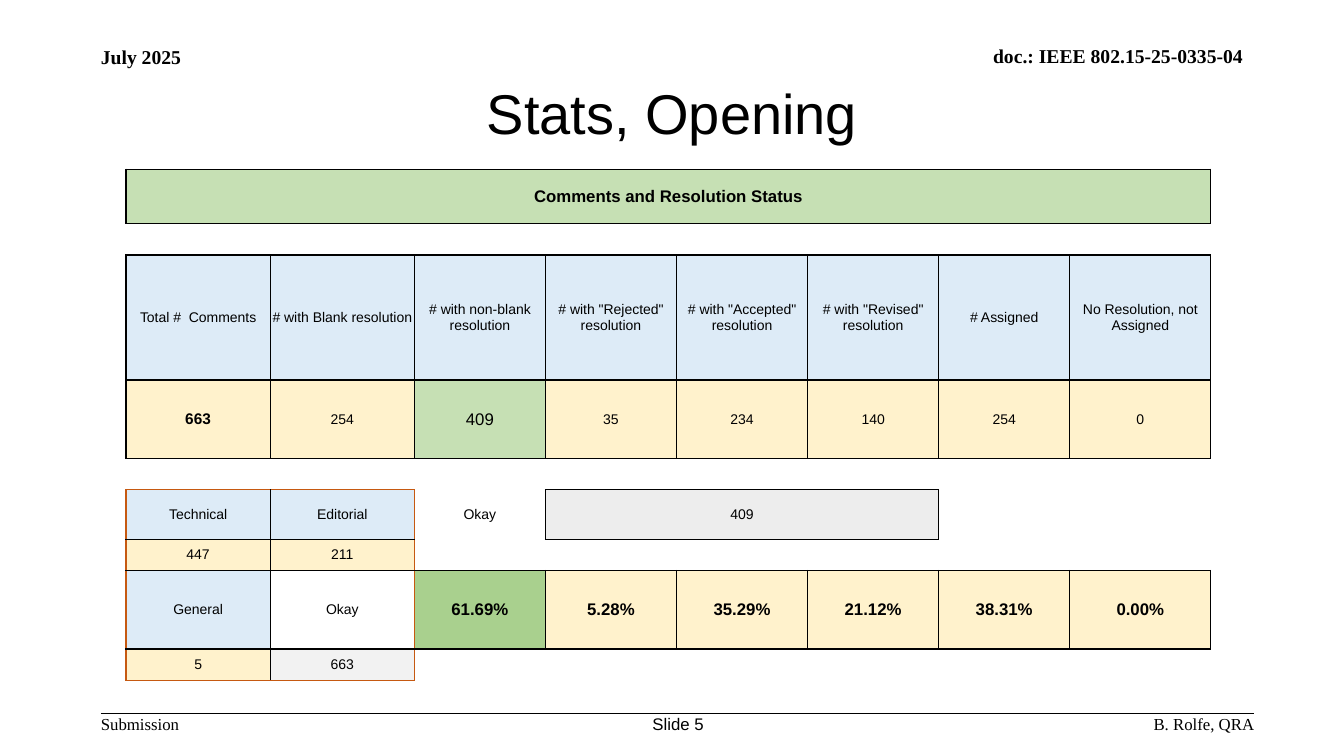
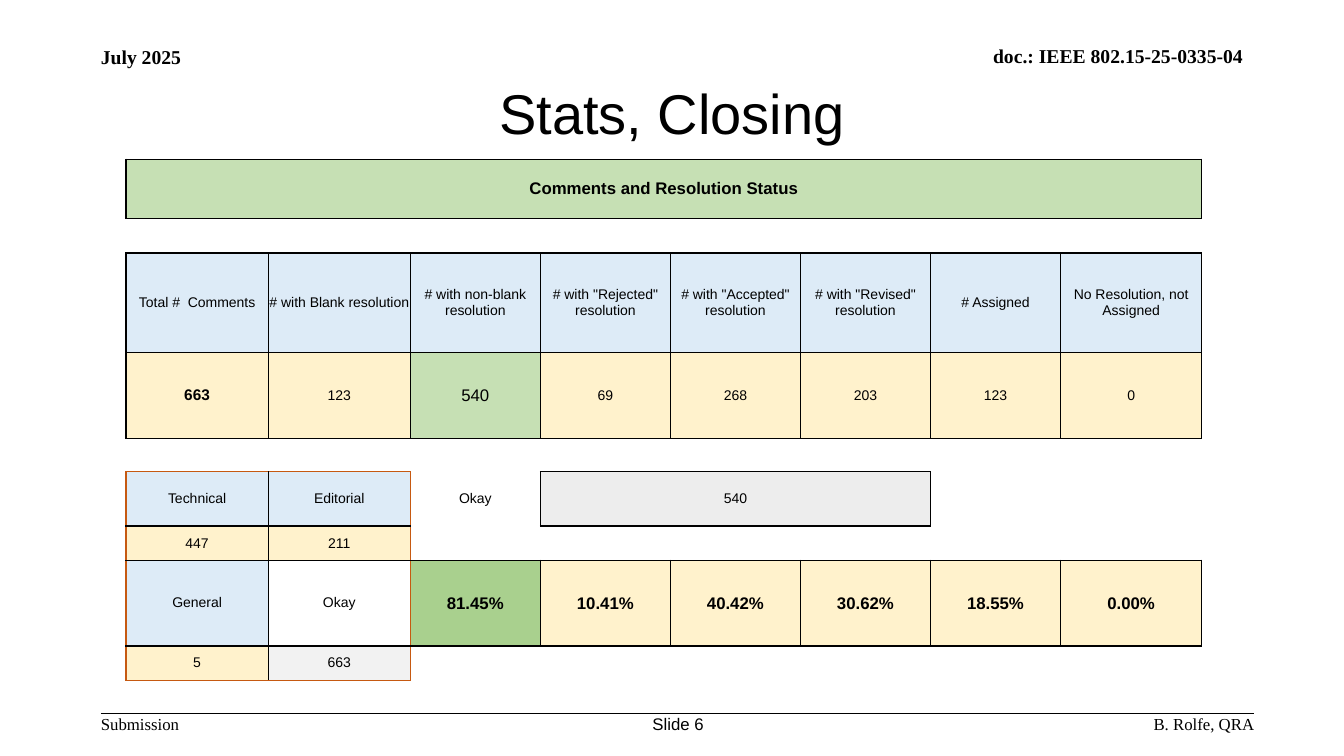
from lxml import etree
from pptx import Presentation
from pptx import util as u
from pptx.dml.color import RGBColor
from pptx.enum import shapes, text
from pptx.oxml.ns import qn

W, H = 13.33, 7.5
LEFT, RIGHT, FOOT = 1, 12.44, 7.08
TABLE_LEFT, TABLE_BOTTOM = 1.25, 6.75
BLACK, ORANGE = "000000", "C65911"
GREEN, DEEP_GREEN = "C6E0B4", "A9D08E"
BLUE, CREAM, GREY, PALE = "DDEBF7", "FFF2CC", "EDEDED", "F2F2F2"
SERIF, SANS = "Times New Roman", "Arial"
ALIGN = text.PP_ALIGN
ANCHOR = text.MSO_ANCHOR
HEADINGS = ["Total #  Comments", "# with Blank resolution", "# with non-blank resolution",
            '# with "Rejected" resolution', '# with "Accepted" resolution',
            '# with "Revised" resolution', "# Assigned", "No Resolution, not Assigned"]
KINDS = {"Technical": 447, "Editorial": 211, "General": 5}
BLOCK = {(r, c) for r in range(5, 9) for c in range(2)}
FRAME = [
    ("July 2025", (LEFT, 0.45, 2.22, 0.24), ALIGN.LEFT, ANCHOR.TOP, SERIF, 14, True),
    ("doc.: IEEE 802.15-25-0335-04", (6.22, 0.43, 6.11, 0.24), ALIGN.RIGHT, ANCHOR.BOTTOM,
     SERIF, 14, True),
    ("Submission", (LEFT, FOOT, 1.04, 0.2), ALIGN.LEFT, ANCHOR.TOP, SERIF, 12, False),
    ("B. Rolfe, QRA", (RIGHT - 3.22, FOOT, 3.22, 0.2), ALIGN.RIGHT, ANCHOR.TOP,
     SERIF, 12, False),
]
SLIDES = [
    dict(title="Stats, Opening", number=5, resolved=[35, 234, 140], unassigned=0,
         cols=[1.43] * 2 + [1.3] * 5 + [1.4],
         rows=[0.54, 0.31, 1.24, 0.78, 0.31, 0.49, 0.31, 0.78, 0.31]),
    dict(title="Stats, Closing", number=6, resolved=[69, 268, 203], unassigned=0,
         cols=[1.41] * 2 + [1.29] * 5 + [1.4],
         rows=[0.59, 0.34, 0.99, 0.85, 0.33, 0.54, 0.34, 0.85, 0.34]),
]


def rgb(value):
    """Turn a hex string into a colour."""
    return RGBColor.from_string(value)


def apply(obj, **values):
    """Set several attributes of an object."""
    for name, value in values.items():
        setattr(obj, name, value)


def write(tf, words, align, font, size, bold=False):
    """Put one formatted paragraph into a text frame."""
    p = tf.paragraphs[0]
    p.alignment = align
    r = p.add_run()
    r.text = words
    apply(r.font, name=font, size=u.Pt(size), bold=bold)
    r.font.color.rgb = rgb(BLACK)


def label(s, words, box, align, anchor, font, size, bold, wrap=True):
    """Add a text box without insets."""
    tf = s.shapes.add_textbox(*map(u.Inches, box)).text_frame
    apply(tf, margin_left=0, margin_right=0, margin_top=0, margin_bottom=0,
          word_wrap=wrap, vertical_anchor=anchor)
    write(tf, words, align, font, size, bold)


def frame(s, title, number):
    """Add the title, header, footer and rule shared by the slides."""
    sp = s.shapes.title
    apply(sp, left=u.Inches(LEFT), top=u.Inches(H / 10),
          width=u.Inches(W - 2 * LEFT), height=u.Inches(0.72))
    apply(sp.text_frame, auto_size=text.MSO_AUTO_SIZE.NONE, vertical_anchor=ANCHOR.MIDDLE)
    write(sp.text_frame, title, ALIGN.CENTER, SANS, 40)
    for item in FRAME:
        label(s, *item)
    label(s, f"Slide {number}", (6.43, FOOT, 0.59, 0.2), ALIGN.CENTER, ANCHOR.TOP,
          SANS, 12, False, wrap=False)
    rule = s.shapes.add_connector(shapes.MSO_CONNECTOR.STRAIGHT,
                                  *map(u.Inches, (LEFT, FOOT, RIGHT, FOOT)))
    rule.line.width = u.Pt(1)
    rule.line.color.rgb = rgb(BLACK)
    etree.SubElement(rule._element.spPr, qn("a:effectLst"))


def status_cells(resolved, unassigned):
    """Map each used cell to its text, fill, size and weight."""
    total, done = sum(KINDS.values()), sum(resolved)
    counts = [done, *resolved, total - done, unassigned]
    cells = {(0, 0): ("Comments and Resolution Status", GREEN, 12, True),
             (3, 0): (total, CREAM, 11, True),
             (3, 1): (total - done, CREAM, 10, False),
             (5, 2): ("Okay", None, 10, False),
             (5, 3): (done, GREY, 10, False),
             (7, 1): ("Okay", None, 10, False),
             (8, 1): (total, PALE, 10, False)}
    for c, heading in enumerate(HEADINGS):
        cells[2, c] = (heading, BLUE, 10, False)
    for c, count in enumerate(counts, 2):
        first = c == 2
        cells[3, c] = (count, GREEN if first else CREAM, 12 if first else 10, False)
        cells[7, c] = (f"{count / total:.2%}", DEEP_GREEN if first else CREAM, 12, True)
    for (r, c), (kind, count) in zip([(5, 0), (5, 1), (7, 0)], KINDS.items()):
        cells[r, c] = (kind, BLUE, 10, False)
        cells[r + 1, c] = (count, CREAM, 10, False)
    return cells


def border(cell, side, colour):
    """Draw one side of a cell, or clear it."""
    ln = etree.SubElement(cell._tc.get_or_add_tcPr(), qn(f"a:ln{side}"), w=str(u.Pt(1)))
    if colour:
        fill = etree.SubElement(ln, qn("a:solidFill"))
        etree.SubElement(fill, qn("a:srgbClr"), val=colour)
    else:
        etree.SubElement(ln, qn("a:noFill"))


def edge_colour(here, there, boxed):
    """Choose the colour between two neighbouring cells."""
    if (here in BLOCK) != (there in BLOCK):
        return ORANGE
    return BLACK if here in boxed or there in boxed else None


def status_table(s, cols, rows, cells):
    """Add the table of comment counts."""
    box = (TABLE_LEFT, TABLE_BOTTOM - sum(rows), sum(cols), sum(rows))
    tbl = s.shapes.add_table(len(rows), len(cols), *map(u.Inches, box)).table
    apply(tbl, first_row=False, horz_banding=False)
    for col, width in zip(tbl.columns, cols):
        col.width = u.Inches(width)
    for row, height in zip(tbl.rows, rows):
        row.height = u.Inches(height)
    fills = {at: cell[1] for at, cell in cells.items() if cell[1]}
    spans = [(0, 0, len(cols) - 1), (5, 3, 5)]
    for r, first, last in spans:
        fills.update({(r, c): fills[r, first] for c in range(first, last + 1)})
        tbl.cell(r, first).merge(tbl.cell(r, last))
    boxed = BLOCK | set(fills)
    for r in range(len(rows)):
        for c in range(len(cols)):
            cell = tbl.cell(r, c)
            apply(cell, margin_left=0, margin_right=0, margin_top=0, margin_bottom=0,
                  vertical_anchor=ANCHOR.MIDDLE)
            for side, there in (("L", (r, c - 1)), ("R", (r, c + 1)),
                                ("T", (r - 1, c)), ("B", (r + 1, c))):
                border(cell, side, edge_colour((r, c), there, boxed))
            if (r, c) in fills:
                cell.fill.solid()
                cell.fill.fore_color.rgb = rgb(fills[r, c])
            else:
                cell.fill.background()
            if (r, c) in cells:
                words, _, size, bold = cells[r, c]
                write(cell.text_frame, str(words), ALIGN.CENTER, SANS, size, bold)


def main():
    """Build and save the slides."""
    prs = Presentation()
    apply(prs, slide_width=u.Inches(W), slide_height=u.Inches(H))
    for d in SLIDES:
        s = prs.slides.add_slide(prs.slide_layouts[5])
        frame(s, d["title"], d["number"])
        status_table(s, d["cols"], d["rows"], status_cells(d["resolved"], d["unassigned"]))
    prs.save("out.pptx")


if __name__ == "__main__":
    main()
